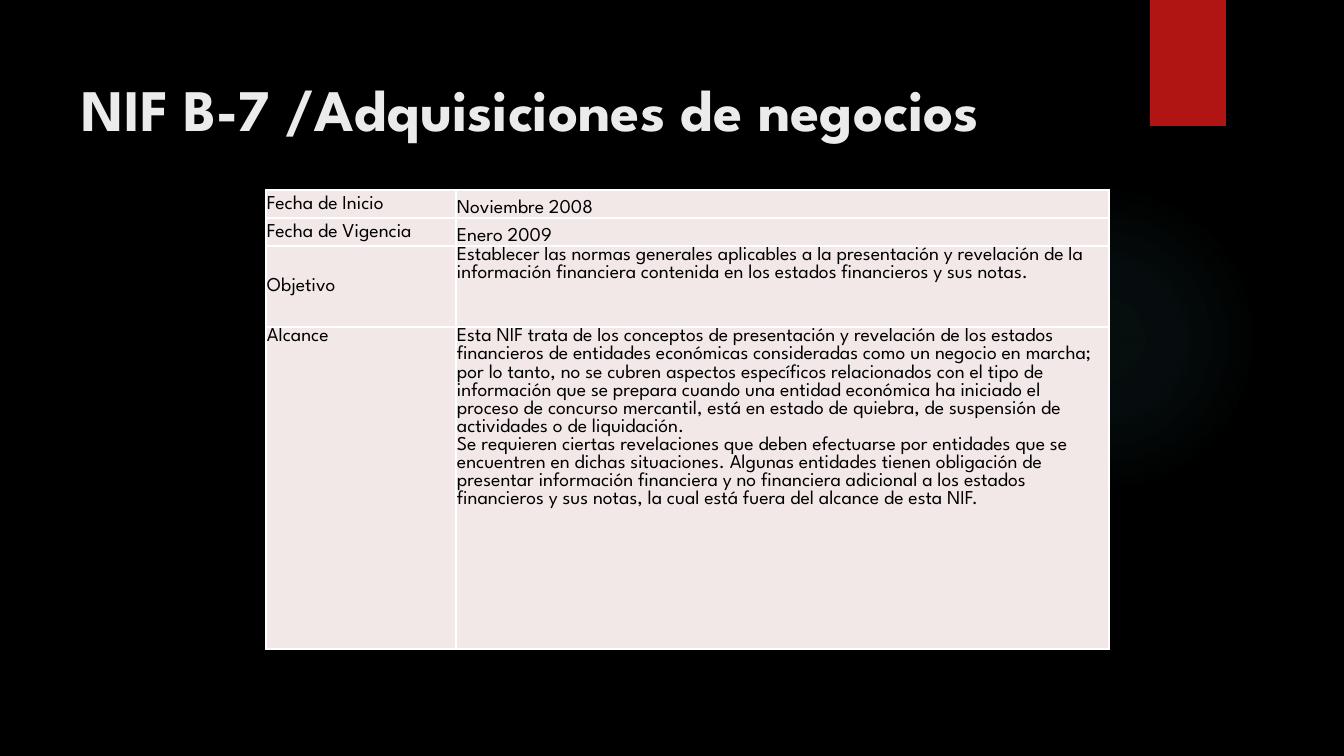
from dataclasses import dataclass

from lxml.etree import SubElement
from pptx import Presentation
from pptx.dml.color import RGBColor
from pptx.enum.shapes import MSO_SHAPE
from pptx.enum.text import MSO_ANCHOR
from pptx.oxml import parse_xml
from pptx.oxml.ns import nsdecls, qn
from pptx.util import Pt

EMU_PER_PX = 12192000 / 1344


@dataclass(frozen=True)
class Theme:
    background: str = "000000"
    glow: str = "50B9C1"
    ribbon: str = "B01513"
    heading: str = "EBEBEB"
    body: str = "000000"
    cell: str = "F2E8E7"
    border: str = "FFFFFF"
    font: str = "League Spartan"
    heading_size: int = 42
    body_size: int = 14
    border_width: int = 1


THEME = Theme()

COLUMN_WIDTHS = (190, 653)
ROW_HEIGHTS = (28, 28, 81, 322)
ROWS = (
    ("Fecha de Inicio", "Noviembre 2008", MSO_ANCHOR.MIDDLE, MSO_ANCHOR.BOTTOM),
    ("Fecha de Vigencia", "Enero 2009", MSO_ANCHOR.MIDDLE, MSO_ANCHOR.BOTTOM),
    (
        "Objetivo",
        "Establecer las normas generales aplicables a la presentación y revelación de la "
        "información financiera contenida en los estados financieros y sus notas.",
        MSO_ANCHOR.MIDDLE,
        MSO_ANCHOR.TOP,
    ),
    (
        "Alcance",
        "Esta NIF trata de los conceptos de presentación y revelación de los estados "
        "financieros de entidades económicas consideradas como un negocio en marcha; "
        "por lo tanto, no se cubren aspectos específicos relacionados con el tipo de "
        "información que se prepara cuando una entidad económica ha iniciado el "
        "proceso de concurso mercantil, está en estado de quiebra, de suspensión de "
        "actividades o de liquidación.\n"
        "Se requieren ciertas revelaciones que deben efectuarse por entidades que se "
        "encuentren en dichas situaciones. Algunas entidades tienen obligación de "
        "presentar información financiera y no financiera adicional a los estados "
        "financieros y sus notas, la cual está fuera del alcance de esta NIF.",
        MSO_ANCHOR.TOP,
        MSO_ANCHOR.TOP,
    ),
)


def px(length):
    return round(length * EMU_PER_PX)


def box(*lengths):
    return [px(length) for length in lengths]


def rgb(color):
    return RGBColor.from_string(color)


def format_runs(frame, size, color, bold=False):
    for paragraph in frame.paragraphs:
        for run in paragraph.runs:
            run.font.name = THEME.font
            run.font.size = Pt(size)
            run.font.bold = bold
            run.font.color.rgb = rgb(color)


def add_plain_shape(slide, preset, left, top, width, height):
    shape = slide.shapes.add_shape(preset, *box(left, top, width, height))
    shape.shadow.inherit = False
    shape.line.fill.background()
    return shape


def add_glow(slide, left, top, size):
    glow = add_plain_shape(slide, MSO_SHAPE.OVAL, left, top, size, size)
    stops = "".join(
        f'<a:gs pos="{position * 1000}"><a:srgbClr val="{THEME.glow}">'
        f'<a:alpha val="{opacity * 1000}"/></a:srgbClr></a:gs>'
        for position, opacity in ((0, 7), (36, 6), (69, 0))
    )
    gradient = parse_xml(
        f'<a:gradFill {nsdecls("a")}><a:gsLst>{stops}</a:gsLst><a:path path="circle">'
        '<a:fillToRect l="50000" t="50000" r="50000" b="50000"/></a:path></a:gradFill>'
    )
    glow.element.spPr.find(qn("a:prstGeom")).addnext(gradient)


def add_ribbon(slide, left, top, width, height):
    ribbon = add_plain_shape(slide, MSO_SHAPE.RECTANGLE, left, top, width, height)
    ribbon.fill.solid()
    ribbon.fill.fore_color.rgb = rgb(THEME.ribbon)


def add_heading(slide, text, left, top, width, height):
    frame = slide.shapes.add_textbox(*box(left, top, width, height)).text_frame
    frame.word_wrap = True
    frame.vertical_anchor = MSO_ANCHOR.TOP
    frame.margin_top = px(23)
    frame.text = text
    format_runs(frame, THEME.heading_size, THEME.heading, bold=True)


def add_borders(cell):
    properties = cell._tc.get_or_add_tcPr()
    for side in ("lnL", "lnR", "lnT", "lnB"):
        line = SubElement(properties, qn(f"a:{side}"), w=str(Pt(THEME.border_width)))
        fill = SubElement(line, qn("a:solidFill"))
        SubElement(fill, qn("a:srgbClr"), val=THEME.border)


def fill_cell(cell, text, anchor):
    cell.margin_left = cell.margin_right = cell.margin_top = px(1)
    cell.margin_bottom = 0
    cell.vertical_anchor = anchor
    add_borders(cell)
    cell.fill.solid()
    cell.fill.fore_color.rgb = rgb(THEME.cell)
    cell.text_frame.text = text
    format_runs(cell.text_frame, THEME.body_size, THEME.body)


def add_standard_table(slide, left, top):
    table = slide.shapes.add_table(
        len(ROWS), len(COLUMN_WIDTHS),
        *box(left, top, sum(COLUMN_WIDTHS), sum(ROW_HEIGHTS)),
    ).table
    table.first_row = table.horz_banding = False
    for column, width in zip(table.columns, COLUMN_WIDTHS):
        column.width = px(width)
    for row, height, (label, detail, label_anchor, detail_anchor) in zip(
        table.rows, ROW_HEIGHTS, ROWS
    ):
        row.height = px(height)
        fill_cell(row.cells[0], label, label_anchor)
        fill_cell(row.cells[1], detail, detail_anchor)


def main():
    deck = Presentation()
    deck.slide_width, deck.slide_height = box(1344, 756)
    slide = deck.slides.add_slide(deck.slide_layouts[6])
    slide.background.fill.solid()
    slide.background.fill.fore_color.rgb = rgb(THEME.background)
    add_glow(slide, 949, 184, 310)
    add_ribbon(slide, 1150, 0, 76, 126)
    add_heading(slide, "NIF B-7 /Adquisiciones de negocios", 72, 50, 1037, 154)
    add_standard_table(slide, 266, 190)
    deck.save("out.pptx")


if __name__ == "__main__":
    main()
